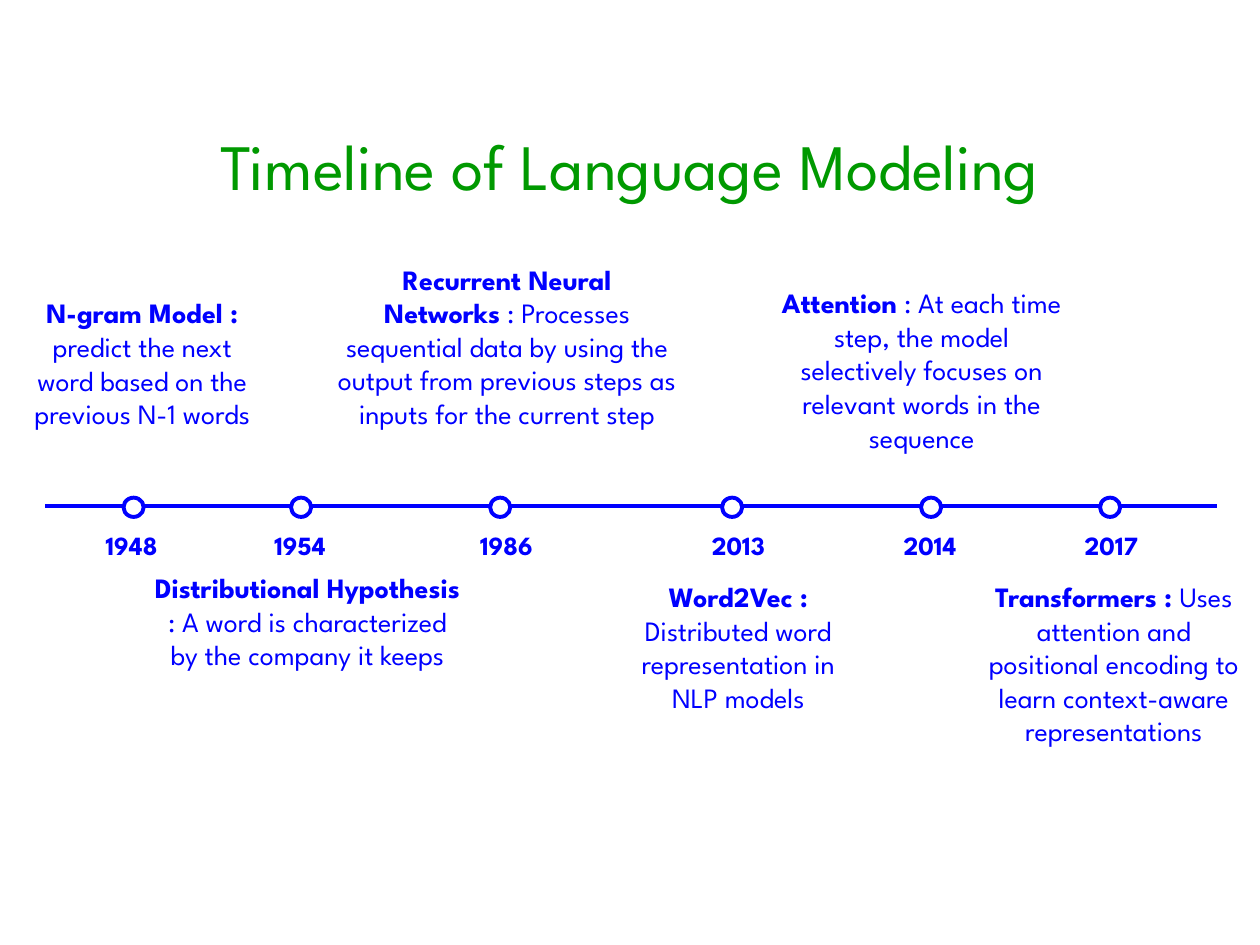
from dataclasses import dataclass

from lxml import etree
from pptx import Presentation
from pptx.dml.color import RGBColor
from pptx.enum.shapes import MSO_CONNECTOR, MSO_SHAPE
from pptx.enum.text import MSO_ANCHOR, PP_ALIGN
from pptx.oxml.ns import qn
from pptx.slide import Slide
from pptx.util import Pt

STRAIGHT = MSO_CONNECTOR.STRAIGHT
OVAL = MSO_SHAPE.OVAL
TOP, MIDDLE = MSO_ANCHOR.TOP, MSO_ANCHOR.MIDDLE
CENTER = PP_ALIGN.CENTER
BLANK_LAYOUT = 6


@dataclass(frozen=True)
class Theme:
    font: str = "League Spartan"
    green: RGBColor = RGBColor(0x00, 0x99, 0x00)
    blue: RGBColor = RGBColor(0x00, 0x00, 0xFF)
    white: RGBColor = RGBColor(0xFF, 0xFF, 0xFF)
    title_size: float = 37
    body_size: float = 16
    year_size: float = 15
    line_width: float = 2.25
    space_before: float = 4.8


@dataclass(frozen=True)
class Box:
    """A frame in points."""
    left: float
    top: float
    width: float
    height: float


@dataclass(frozen=True)
class TextPart:
    text: str
    size: float
    color: RGBColor
    bold: bool = False


@dataclass(frozen=True)
class Milestone:
    year: str
    dot_left: float
    year_center: float
    name: str
    description: str
    box: Box


THEME = Theme()
TITLE_BOX = Box(9.4, 60.5, 700.6, 67.7)
AXIS_LEFT, AXIS_RIGHT, AXIS_Y = 25.9, 695.5, 289.4
DOT_TOP, DOT_WIDTH, DOT_HEIGHT = 284.4, 11.5, 11
YEAR_TOP, YEAR_WIDTH, YEAR_HEIGHT = 298.8, 54, 46.8

MILESTONES = [
    Milestone("1948", 70.6, 75.2, "N-gram Model : ",
              "predict the next word based on the previous N-1 words",
              Box(7.9, 165.6, 146.9, 124.6)),
    Milestone("1954", 166.3, 171.4, "Distributional Hypothesis",
              " : A word is characterized by the company it keeps",
              Box(81.4, 322.6, 188.6, 140.4)),
    Milestone("1986", 280.1, 289.4, "Recurrent Neural Networks",
              " : Processes sequential data by using the output from "
              "previous steps as inputs for the current step",
              Box(185, 146.2, 209.5, 140.4)),
    Milestone("2013", 412.6, 421.9, "Word2Vec : ",
              "Distributed word representation in NLP models",
              Box(346.3, 327.6, 151.2, 136.1)),
    Milestone("2014", 526.3, 531.4, "Attention",
              " : At each time step, the model selectively focuses on "
              "relevant words in the sequence",
              Box(436.3, 159.8, 180.7, 124.6)),
    Milestone("2017", 628.6, 635, "Transformers : ",
              "Uses attention and positional encoding to learn "
              "context-aware representations",
              Box(557.3, 327.6, 158.4, 204.5)),
]


def add_text(slide: Slide, box: Box, parts: list[TextPart],
             anchor: MSO_ANCHOR = TOP, space_before: float = THEME.space_before) -> None:
    frame = slide.shapes.add_textbox(
        Pt(box.left), Pt(box.top), Pt(box.width), Pt(box.height)).text_frame
    frame.word_wrap = True
    frame.vertical_anchor = anchor
    para = frame.paragraphs[0]
    para.alignment = CENTER
    para.space_before = Pt(space_before)
    for part in parts:
        span = para.add_run()
        span.text = part.text
        span.font.name = THEME.font
        span.font.size = Pt(part.size)
        span.font.bold = part.bold
        span.font.color.rgb = part.color


def add_axis(slide: Slide) -> None:
    axis = slide.shapes.add_connector(
        STRAIGHT, Pt(AXIS_LEFT), Pt(AXIS_Y), Pt(AXIS_RIGHT), Pt(AXIS_Y))
    axis.line.color.rgb = THEME.blue
    axis.line.width = Pt(THEME.line_width)
    etree.SubElement(axis.element.spPr, qn("a:effectLst"))


def add_dot(slide: Slide, left: float) -> None:
    dot = slide.shapes.add_shape(
        OVAL, Pt(left), Pt(DOT_TOP), Pt(DOT_WIDTH), Pt(DOT_HEIGHT))
    dot.shadow.inherit = False
    dot.fill.solid()
    dot.fill.fore_color.rgb = THEME.white
    dot.line.color.rgb = THEME.blue
    dot.line.width = Pt(THEME.line_width)


def add_milestone(slide: Slide, milestone: Milestone) -> None:
    add_dot(slide, milestone.dot_left)
    year_box = Box(milestone.year_center - YEAR_WIDTH / 2, YEAR_TOP,
                   YEAR_WIDTH, YEAR_HEIGHT)
    add_text(slide, year_box,
             [TextPart(milestone.year, THEME.year_size, THEME.blue, bold=True)])
    add_text(slide, milestone.box, [
        TextPart(milestone.name, THEME.body_size, THEME.blue, bold=True),
        TextPart(milestone.description, THEME.body_size, THEME.blue),
    ])


def main() -> None:
    deck = Presentation()
    deck.slide_width, deck.slide_height = Pt(720), Pt(540)
    slide = deck.slides.add_slide(deck.slide_layouts[BLANK_LAYOUT])
    title = TextPart("Timeline of Language Modeling", THEME.title_size, THEME.green)
    add_text(slide, TITLE_BOX, [title], anchor=MIDDLE, space_before=0)
    add_axis(slide)
    for milestone in MILESTONES:
        add_milestone(slide, milestone)
    deck.save("out.pptx")


if __name__ == "__main__":
    main()
